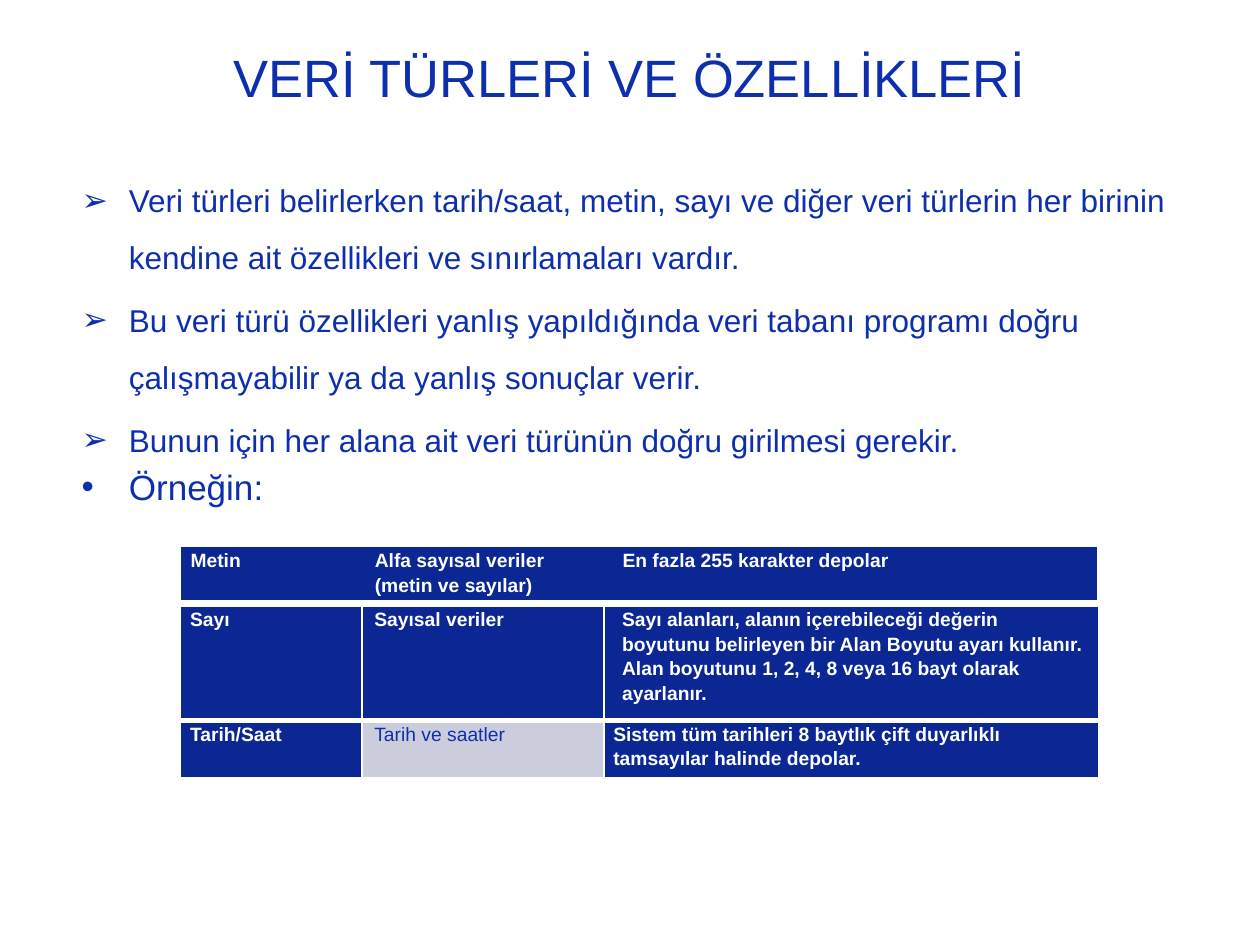
from dataclasses import dataclass

from lxml.etree import SubElement
from pptx import Presentation
from pptx.dml.color import RGBColor
from pptx.enum.text import MSO_ANCHOR as Anchor, PP_ALIGN as Align
from pptx.oxml.ns import qn
from pptx.util import Pt


@dataclass(frozen=True)
class Theme:
    font: str = "Arial"
    blue: str = "0E2FAD"
    cell: str = "0A2793"
    pale: str = "CCCDDC"
    white: str = "FFFFFF"
    title_size: float = 30
    text_size: float = 18
    example_size: float = 20
    cell_size: float = 11


THEME = Theme()

POINTS = [
    "Veri türleri belirlerken tarih/saat, metin, sayı ve diğer veri türlerin "
    "her birinin kendine ait özellikleri ve sınırlamaları vardır.",
    "Bu veri türü özellikleri yanlış yapıldığında veri tabanı programı doğru "
    "çalışmayabilir ya da yanlış sonuçlar verir.",
    "Bunun için her alana ait veri türünün doğru girilmesi gerekir.",
]
EXAMPLE = "Örneğin:"

TEXT_ROW = ["Metin", "Alfa sayısal veriler (metin ve sayılar)",
            "En fazla 255 karakter depolar"]
NUMBER_ROW = ["Sayı", "Sayısal veriler",
              "Sayı alanları, alanın içerebileceği değerin boyutunu belirleyen "
              "bir Alan Boyutu ayarı kullanır. Alan boyutunu 1, 2, 4, 8 veya "
              "16 bayt olarak ayarlanır."]
DATE_ROW = ["Tarih/Saat", "Tarih ve saatler",
            "Sistem tüm tarihleri 8 baytlık çift duyarlıklı tamsayılar "
            "halinde depolar."]


def style_font(para, size, color, bold=False):
    font = para.font
    font.name, font.size, font.bold = THEME.font, Pt(size), bold
    font.color.rgb = RGBColor.from_string(color)


def set_indent(para, left, first=0):
    props = para._p.get_or_add_pPr()
    props.set("marL", str(Pt(left)))
    props.set("indent", str(Pt(first)))
    return props


def set_borders(cell, widths):
    """Widths run left, right, top, bottom; zero means no line."""
    props = cell._tc.get_or_add_tcPr()
    for index, (side, width) in enumerate(zip("LRTB", widths)):
        line = props.makeelement(qn(f"a:ln{side}"), {"w": str(Pt(width))})
        props.insert(index, line)
        if width:
            fill = SubElement(line, qn("a:solidFill"))
            SubElement(fill, qn("a:srgbClr"), val=THEME.white)
        else:
            SubElement(line, qn("a:noFill"))


def place_title(page, left, top, width, height):
    title = page.shapes.title
    title.left, title.top = Pt(left), Pt(top)
    title.width, title.height = Pt(width), Pt(height)
    frame = title.text_frame
    frame.text = "VERİ TÜRLERİ VE ÖZELLİKLERİ"
    frame.vertical_anchor = Anchor.MIDDLE
    para = frame.paragraphs[0]
    para.alignment = Align.CENTER
    style_font(para, THEME.title_size, THEME.blue)


def add_points(page, left, top, width, height):
    box = page.shapes.add_textbox(Pt(left), Pt(top), Pt(width), Pt(height))
    frame = box.text_frame
    frame.word_wrap = True
    items = [(text, "➢", THEME.text_size, 1.5) for text in POINTS]
    items.append((EXAMPLE, "•", THEME.example_size, 1.0))
    for index, (text, bullet, size, spacing) in enumerate(items):
        para = frame.add_paragraph() if index else frame.paragraphs[0]
        para.text = text
        para.line_spacing = spacing
        para.space_before = Pt(0.2 * size if index else 0)
        props = set_indent(para, 27, -27)
        SubElement(props, qn("a:buFont"), typeface=THEME.font)
        SubElement(props, qn("a:buChar"), char=bullet)
        style_font(para, size, THEME.blue)


def add_type_table(page, left, top, columns, heights, rows, borders, inset,
                   indents, pale_cells=()):
    table = page.shapes.add_table(
        len(rows), len(columns), Pt(left), Pt(top),
        Pt(sum(columns)), Pt(sum(heights))).table
    table.first_row = table.horz_banding = False
    for column, width in zip(table.columns, columns):
        column.width = Pt(width)
    for r, texts in enumerate(rows):
        table.rows[r].height = Pt(heights[r])
        for c, text in enumerate(texts):
            cell = table.cell(r, c)
            pale = (r, c) in pale_cells
            cell.margin_left = cell.margin_right = Pt(inset)
            cell.margin_top = cell.margin_bottom = 0
            cell.fill.solid()
            cell.fill.fore_color.rgb = RGBColor.from_string(
                THEME.pale if pale else THEME.cell)
            set_borders(cell, borders[r])
            cell.text = text
            para = cell.text_frame.paragraphs[0]
            para.line_spacing = 1.15
            set_indent(para, indents[r][c])
            style_font(para, THEME.cell_size,
                       THEME.blue if pale else THEME.white, not pale)


def main():
    deck = Presentation()
    deck.slide_width, deck.slide_height = Pt(720), Pt(540)
    page = deck.slides.add_slide(deck.slide_layouts[5])

    place_title(page, 36, 15.1, 648, 57)
    add_points(page, 39.6, 89.3, 662.4, 356.4)

    # Text type stands alone; number and date types share a ruled table
    add_type_table(page, 103.5, 312.5, [103.7, 138.2, 281.5], [30.2],
                   [TEXT_ROW], [(0, 0, 0, 0)], 5.4, [(0, 1.6, 5)])
    add_type_table(page, 103.2, 346.3, [103.7, 138.2, 283], [65.5, 32.4],
                   [NUMBER_ROW, DATE_ROW], [(1, 1, 1, 3), (1, 1, 1, 1)], 5.4,
                   [(0, 1.6, 5), (0, 1.6, 0)], pale_cells={(1, 1)})
    deck.save("out.pptx")


if __name__ == "__main__":
    main()
